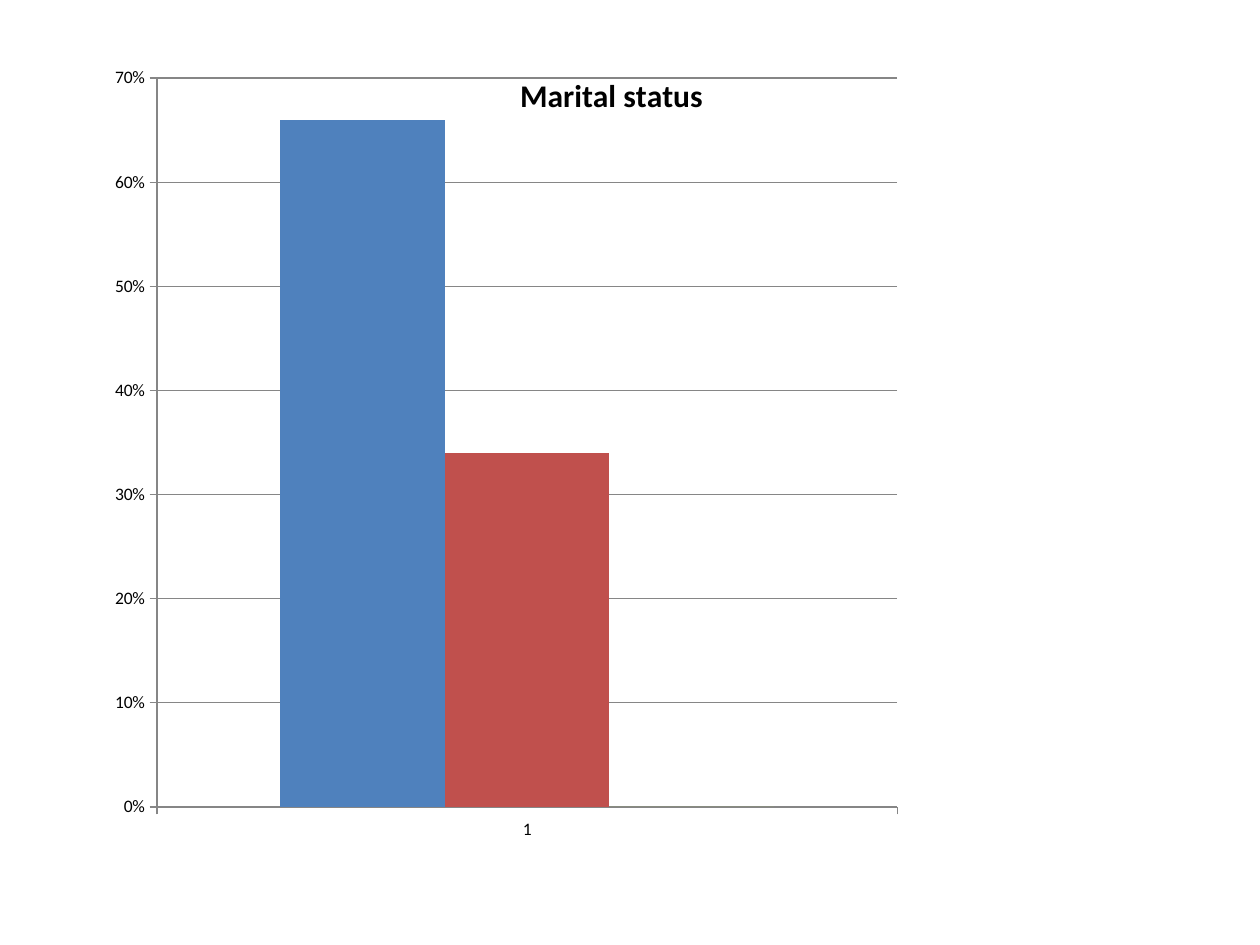
"""Build a slide with a clustered column chart of marital status."""
from lxml.etree import SubElement
from pptx import Presentation
from pptx.chart.data import CategoryChartData
from pptx.dml.color import RGBColor
from pptx.enum.chart import XL_CHART_TYPE, XL_TICK_MARK
from pptx.oxml.ns import qn
from pptx.util import Pt

BLACK = RGBColor(0x00, 0x00, 0x00)
GRAY = RGBColor(0x86, 0x86, 0x86)
BLUE = RGBColor(0x4F, 0x81, 0xBD)
RED = RGBColor(0xC0, 0x50, 0x4D)
GREEN = RGBColor(0x9B, 0xBB, 0x59)
SERIES = [("Series 1", 0.66, BLUE), ("Series 2", 0.34, RED), ("Series 3", 0, GREEN)]


def write_text(frame, text, size=18, bold=False, color=BLACK, font="Calibri"):
    span = frame.paragraphs[0].add_run()
    span.text = text
    span.font.size = Pt(size)
    span.font.bold = bold
    span.font.color.rgb = color
    span.font.name = font


def place(element, index, **settings):
    for old_layout in element.findall(qn("c:layout")):
        element.remove(old_layout)
    layout = SubElement(element, qn("c:layout"))
    element.insert(index, layout)
    manual = SubElement(layout, qn("c:manualLayout"))
    for name, value in settings.items():
        SubElement(manual, qn(f"c:{name}")).set("val", str(value))


deck = Presentation()
deck.slide_width, deck.slide_height = Pt(720), Pt(540)
page = deck.slides.add_slide(deck.slide_layouts[6])

data = CategoryChartData(number_format="0%")
data.categories = ["1"]
for name, value, color in SERIES:
    data.add_series(name, [value])
chart = page.shapes.add_chart(
    XL_CHART_TYPE.COLUMN_CLUSTERED, Pt(18), Pt(18), Pt(690), Pt(522), data
).chart
chart.has_legend = False
chart.font.name = "Calibri"
chart.font.size = Pt(10)
chart.font.color.rgb = BLACK

chart.has_title = True
title = chart.chart_title
write_text(title.text_frame, "Marital status", bold=True)
title.include_in_layout = True
place(title._element, 1, xMode="edge", yMode="edge", x=0.4, y=0.04)
place(chart._chartSpace.chart.plotArea, 0, layoutTarget="inner",
      xMode="edge", yMode="edge", x=0.104, y=0.051, w=0.613, h=0.798)

plot = chart.plots[0]
plot.gap_width = 150
plot.overlap = 0
plot.vary_by_categories = False
for series, (name, value, color) in zip(plot.series, SERIES):
    series.format.fill.solid()
    series.format.fill.fore_color.rgb = color

for axis in (chart.category_axis, chart.value_axis):
    axis.major_tick_mark = XL_TICK_MARK.OUTSIDE
    axis.minor_tick_mark = XL_TICK_MARK.NONE
    axis.format.line.color.rgb = GRAY
    axis.format.line.width = Pt(0.75)

scale = chart.value_axis
scale.minimum_scale, scale.maximum_scale, scale.major_unit = 0, 0.7, 0.1
scale.tick_labels.number_format = "0%"
scale.tick_labels.number_format_is_linked = False
scale.has_major_gridlines = True
scale.major_gridlines.format.line.color.rgb = GRAY
scale.major_gridlines.format.line.width = Pt(0.75)

deck.save("out.pptx")
